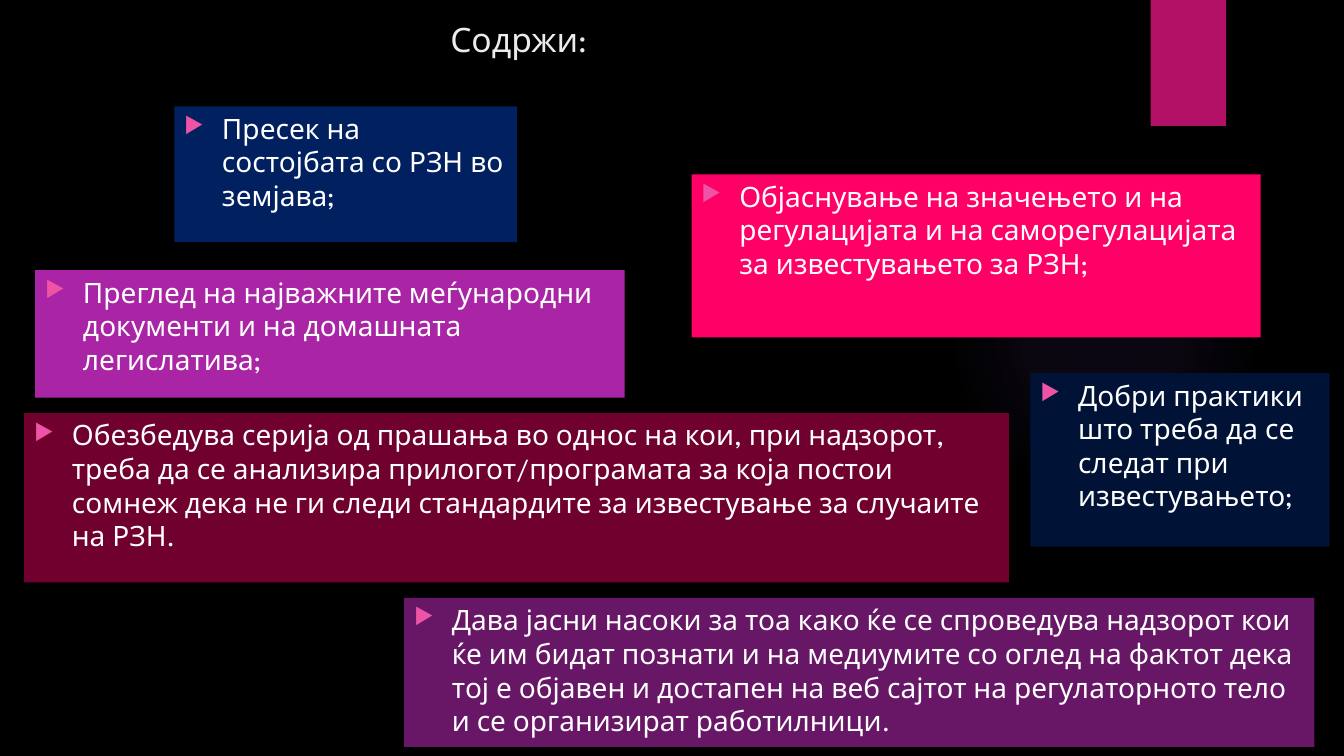
from pptx import Presentation
from pptx.dml.color import RGBColor as RGB
from pptx.enum.shapes import MSO_SHAPE as SHAPE
from pptx.enum.text import MSO_ANCHOR as ANCHOR, PP_ALIGN as ALIGN
from pptx.oxml import parse_xml
from pptx.oxml.ns import nsdecls, qn
from pptx.util import Pt

# Content: text, fill, (left, top, width, height) in points
TITLE = ("Содржи:", (314.6, 10, 278.6, 51))
TOPICS = [
    ("Дава јасни насоки за тоа како ќе се спроведува надзорот кои ќе им бидат "
     "познати и на медиумите со оглед на фактот дека тој е објавен и достапен на "
     "веб сајтот на регулаторното тело и се организират работилници.",
     "671765", (288.7, 427, 650.2, 106.5)),
    ("Преглед на најважните меѓународни документи и на домашната легислатива;",
     "A925A5", (25.2, 193, 421, 91)),
    ("Објаснување на значењето и на регулацијата и на саморегулацијата за "
     "известувањето за РЗН;",
     "FF0066", (494, 124.5, 406.6, 116.5)),
    ("Пресек на состојбата со РЗН во земјава;",
     "002060", (124.5, 76, 244.8, 97)),
    ("Обезбедува серија од прашања во однос на кои, при надзорот, треба да се "
     "анализира прилогот/програмата за која постои сомнеж дека не ги следи "
     "стандардите за известување за случаите на РЗН.",
     "70002D", (17.3, 295, 703.4, 121)),
    ("Добри практики што треба да се следат при известувањето;",
     "001236", (736, 266.5, 213.8, 124)),
]
GLOW_BOX = (677.5, 131.8, 221.8, 221.8)
GLOW_STOPS = [(0, 7), (36, 6), (69, 0)]  # position %, opacity %
RIBBON_BOX = (821.9, 0, 54, 90)
INDENT = 27

THEME = {
    "font": "League Spartan", "title_size": 24, "topic_size": 20,
    "background": "000000", "title": "EBEBEB", "topic": "FFFFFF",
    "bullet": "EF53A5", "ribbon": "B31166", "glow": "9B6BF2",
}


def add_block(slide, kind, box, color):
    block = slide.shapes.add_shape(kind, *map(Pt, box))
    block.shadow.inherit = False
    block.line.fill.background()
    block.fill.solid()
    block.fill.fore_color.rgb = RGB.from_string(color)
    return block


def add_glow(slide):
    glow = add_block(slide, SHAPE.OVAL, GLOW_BOX, THEME["glow"])
    stops = "".join(
        f'<a:gs pos="{position * 1000}"><a:srgbClr val="{THEME["glow"]}">'
        f'<a:alpha val="{opacity * 1000}"/></a:srgbClr></a:gs>'
        for position, opacity in GLOW_STOPS)
    gradient = parse_xml(
        f'<a:gradFill {nsdecls("a")}><a:gsLst>{stops}</a:gsLst><a:path path="circle">'
        '<a:fillToRect l="50000" t="50000" r="50000" b="50000"/></a:path></a:gradFill>')
    properties = glow.element.spPr
    properties.replace(properties.find(qn("a:solidFill")), gradient)


def add_bullet(paragraph):
    properties = paragraph._p.get_or_add_pPr()
    properties.set("marL", str(Pt(INDENT)))
    properties.set("indent", str(-Pt(INDENT)))
    for tag in (f'buClr {nsdecls("a")}><a:srgbClr val="{THEME["bullet"]}"/></a:buClr',
                f'buSzPct {nsdecls("a")} val="80000"/',
                f'buChar {nsdecls("a")} char="▶"/'):
        properties.append(parse_xml(f"<a:{tag}>"))


def write(holder, text, size, color, bulleted=False):
    frame = holder.text_frame
    frame.word_wrap = True
    frame.vertical_anchor = ANCHOR.TOP
    paragraph = frame.paragraphs[0]
    paragraph.alignment = ALIGN.LEFT
    if bulleted:
        add_bullet(paragraph)
    run = paragraph.add_run()
    run.text = text
    run.font.name = THEME["font"]
    run.font.size = Pt(size)
    run.font.color.rgb = RGB.from_string(color)


def main():
    deck = Presentation()
    deck.slide_width, deck.slide_height = Pt(960), Pt(540)
    slide = deck.slides.add_slide(deck.slide_layouts[6])
    slide.background.fill.solid()
    slide.background.fill.fore_color.rgb = RGB.from_string(THEME["background"])

    # Backdrop
    add_glow(slide)
    add_block(slide, SHAPE.RECTANGLE, RIBBON_BOX, THEME["ribbon"])

    # Title
    text, box = TITLE
    heading = slide.shapes.add_textbox(*map(Pt, box))
    write(heading, text, THEME["title_size"], THEME["title"])

    # Topics
    for text, color, box in TOPICS:
        topic = add_block(slide, SHAPE.RECTANGLE, box, color)
        write(topic, text, THEME["topic_size"], THEME["topic"], bulleted=True)

    deck.save("out.pptx")


if __name__ == "__main__":
    main()
